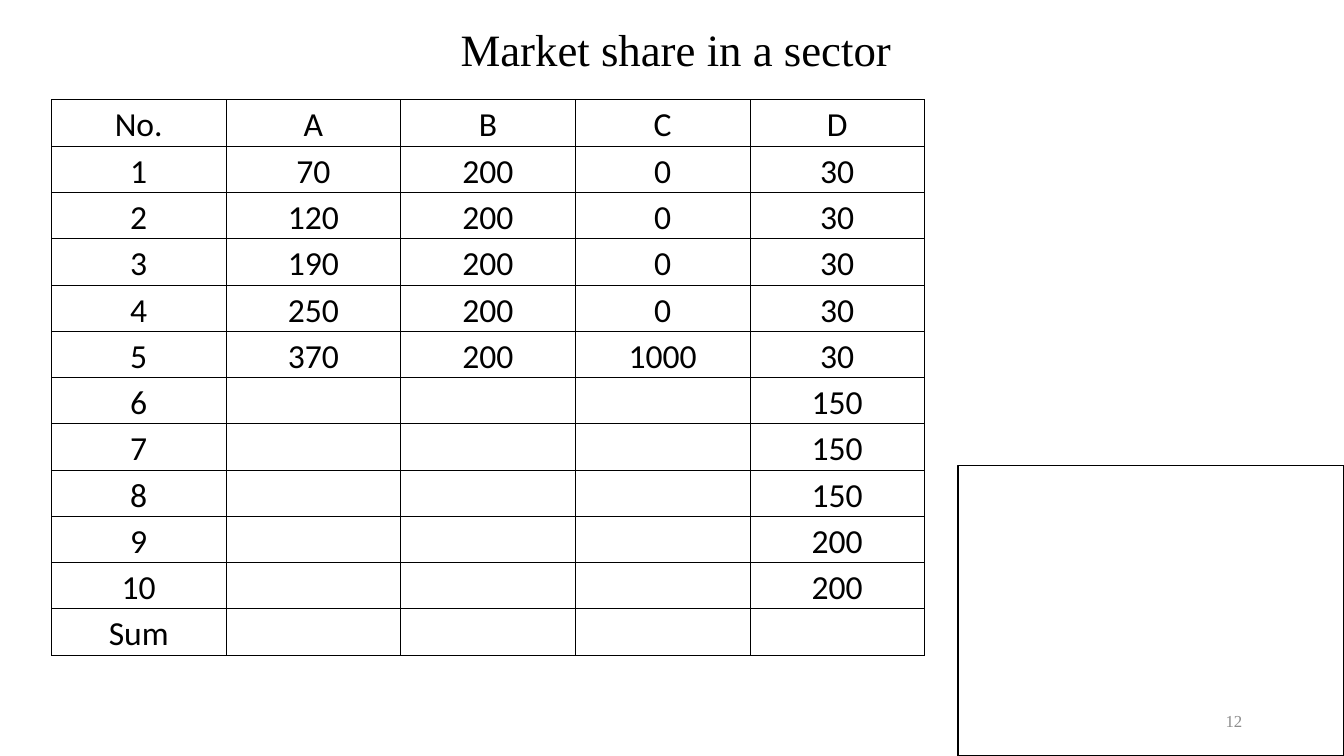
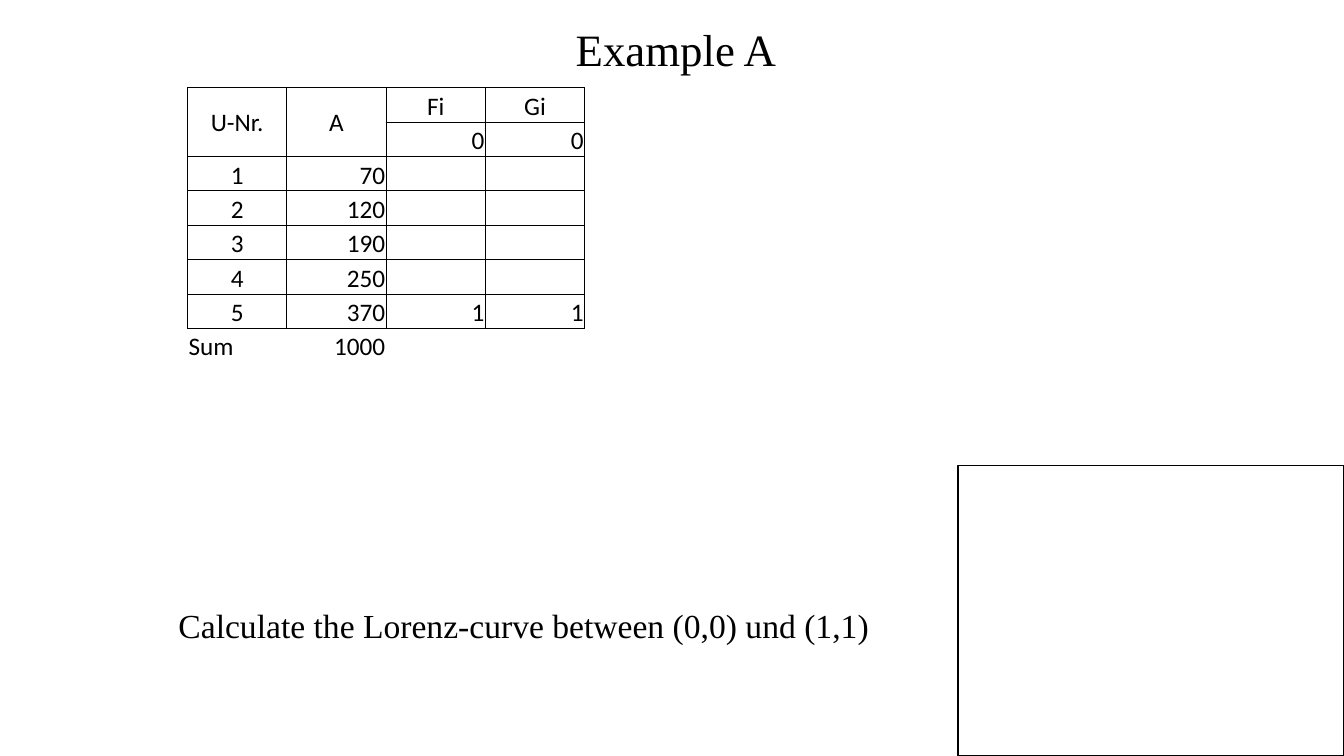
import dataclasses
from typing import Any

import lxml.etree
import pptx
import pptx.dml.color
import pptx.enum.shapes
import pptx.enum.text
import pptx.oxml.ns
import pptx.util

Inches = pptx.util.Inches
Pt = pptx.util.Pt
Align = pptx.enum.text.PP_ALIGN
Anchor = pptx.enum.text.MSO_ANCHOR
qn = pptx.oxml.ns.qn

SERIF = "Times New Roman"
SANS = "Calibri"
BLACK = "000000"
GREY = "8C8C8C"
MARGIN = 0.01


@dataclasses.dataclass(frozen=True)
class Box:
    left: float
    top: float
    width: float
    height: float

    def place(self, shape: Any) -> None:
        shape.left, shape.top = Inches(self.left), Inches(self.top)
        shape.width, shape.height = Inches(self.width), Inches(self.height)

    def sizes(self) -> tuple:
        return tuple(map(Inches, dataclasses.astuple(self)))


@dataclasses.dataclass(frozen=True)
class Grid:
    """A table; marks holds one letter (l, c or r) per cell for its alignment."""
    box: Box
    size: int
    rows: list[list[str]]
    marks: list[str]
    merged: int = 0
    open_end: bool = False


TITLE = Box(1.86, 0.13, 9.69, 0.71)
TASK = Box(1.67, 5.95, 10, 1)
NUMBER = Box(9.42, 6.95, 3, 0.4)
FRAME = Box(9.5, 4.62, 3.83, 2.88)
ALIGNS = {"l": Align.LEFT, "c": Align.CENTER, "r": Align.RIGHT}

HEAD = ["No.", "A", "B", "C", "D"]
A = [70, 120, 190, 250, 370]
B = [200] * 5
C = [0] * 4 + [1000]
D = [30] * 5 + [150] * 3 + [200] * 2


def pick(values: list[int], index: int) -> str:
    return str(values[index]) if index < len(values) else ""


SHARES = Grid(
    Box(0.51, 0.99, 8.66, 5.51), 24,
    [HEAD]
    + [[str(i + 1)] + [pick(firm, i) for firm in (A, B, C, D)] for i in range(10)]
    + [["Sum", "", "", "", ""]],
    ["ccccc"] * 12,
)
LORENZ = Grid(
    Box(1.86, 0.87, 3.94, 2.73), 18,
    [["U-Nr.", "A", "Fi", "Gi"], ["", "", "0", "0"]]
    + [[str(i), str(a)] + ["1" if i == len(A) else ""] * 2
       for i, a in enumerate(A, 1)]
    + [["Sum", str(sum(A)), "", ""]],
    ["cccc"] + ["crrr"] * 6 + ["lrrr"],
    merged=2,
    open_end=True,
)


def tint(code: str) -> pptx.dml.color.RGBColor:
    return pptx.dml.color.RGBColor.from_string(code)


def style(para: Any, face: str, size: int, align: Any, color: str = BLACK) -> None:
    para.alignment = align
    para.font.name = face
    para.font.size = Pt(size)
    para.font.bold = False
    para.font.color.rgb = tint(color)


def set_edges(cell: Any, shown: str) -> None:
    """Draw the cell edges named in shown (L, R, T, B) and clear the rest."""
    props = cell._tc.get_or_add_tcPr()
    for spot, side in enumerate("LRTB"):
        line = lxml.etree.Element(qn(f"a:ln{side}"), w=str(Pt(0.5)))
        if side in shown:
            fill = lxml.etree.SubElement(line, qn("a:solidFill"))
            lxml.etree.SubElement(fill, qn("a:srgbClr"), val=BLACK)
        else:
            lxml.etree.SubElement(line, qn("a:noFill"))
        props.insert(spot, line)


def add_grid(slide: Any, grid: Grid) -> None:
    count, width = len(grid.rows), len(grid.rows[0])
    table = slide.shapes.add_table(count, width, *grid.box.sizes()).table
    table.first_row = table.horz_banding = False
    for row in table.rows:
        row.height = Inches(grid.box.height / count)
    for column in table.columns:
        column.width = Inches(grid.box.width / width)
    for r, (texts, marks) in enumerate(zip(grid.rows, grid.marks)):
        last = grid.open_end and r == count - 1
        for c, (text, mark) in enumerate(zip(texts, marks)):
            cell = table.cell(r, c)
            cell.text = text
            cell.fill.background()
            cell.margin_left = cell.margin_right = cell.margin_top = Inches(MARGIN)
            cell.margin_bottom = 0
            cell.vertical_anchor = Anchor.BOTTOM
            style(cell.text_frame.paragraphs[0], SANS, grid.size, ALIGNS[mark])
            set_edges(cell, "T" if last else "LRTB")
    for c in range(grid.merged):
        table.cell(0, c).merge(table.cell(1, c))
        table.cell(0, c).vertical_anchor = Anchor.MIDDLE


def fill_text(shape: Any, text: str, anchor: Any) -> Any:
    """Set the text of a shape and return its paragraph."""
    frame = shape.text_frame
    frame.text = text
    frame.word_wrap = True
    frame.auto_size = pptx.enum.text.MSO_AUTO_SIZE.NONE
    frame.vertical_anchor = anchor
    return frame.paragraphs[0]


def add_slide(deck: Any, layout: int, title: str) -> Any:
    slide = deck.slides.add_slide(deck.slide_layouts[layout])
    TITLE.place(slide.shapes.title)
    para = fill_text(slide.shapes.title, title, Anchor.MIDDLE)
    style(para, SERIF, 32, Align.CENTER)
    return slide


def add_number(slide: Any, number: int) -> None:
    box = slide.shapes.add_textbox(*NUMBER.sizes())
    para = fill_text(box, str(number), Anchor.MIDDLE)
    style(para, SERIF, 12, Align.RIGHT, GREY)


def add_task(slide: Any, text: str) -> None:
    body = slide.placeholders[1]
    TASK.place(body)
    para = fill_text(body, text, Anchor.TOP)
    para.space_before = Pt(0)
    props = para._p.get_or_add_pPr()
    props.set("marL", "0")
    props.set("indent", "0")
    lxml.etree.SubElement(props, qn("a:buNone"))
    style(para, SERIF, 24, Align.LEFT)


def add_frame(slide: Any) -> None:
    kind = pptx.enum.shapes.MSO_SHAPE.RECTANGLE
    frame = slide.shapes.add_shape(kind, *FRAME.sizes())
    frame.shadow.inherit = False
    frame.fill.background()
    frame.line.color.rgb = tint(BLACK)
    frame.line.width = Pt(1)


def main() -> None:
    deck = pptx.Presentation()
    deck.slide_width, deck.slide_height = Inches(13.33), Inches(7.5)

    market = add_slide(deck, 5, "Market share in a sector")
    add_number(market, 12)
    add_grid(market, SHARES)
    add_frame(market)

    example = add_slide(deck, 1, "Example A")
    add_grid(example, LORENZ)
    add_task(example, "Calculate the Lorenz-curve between (0,0) und (1,1)")
    add_frame(example)

    deck.save("out.pptx")


if __name__ == "__main__":
    main()
